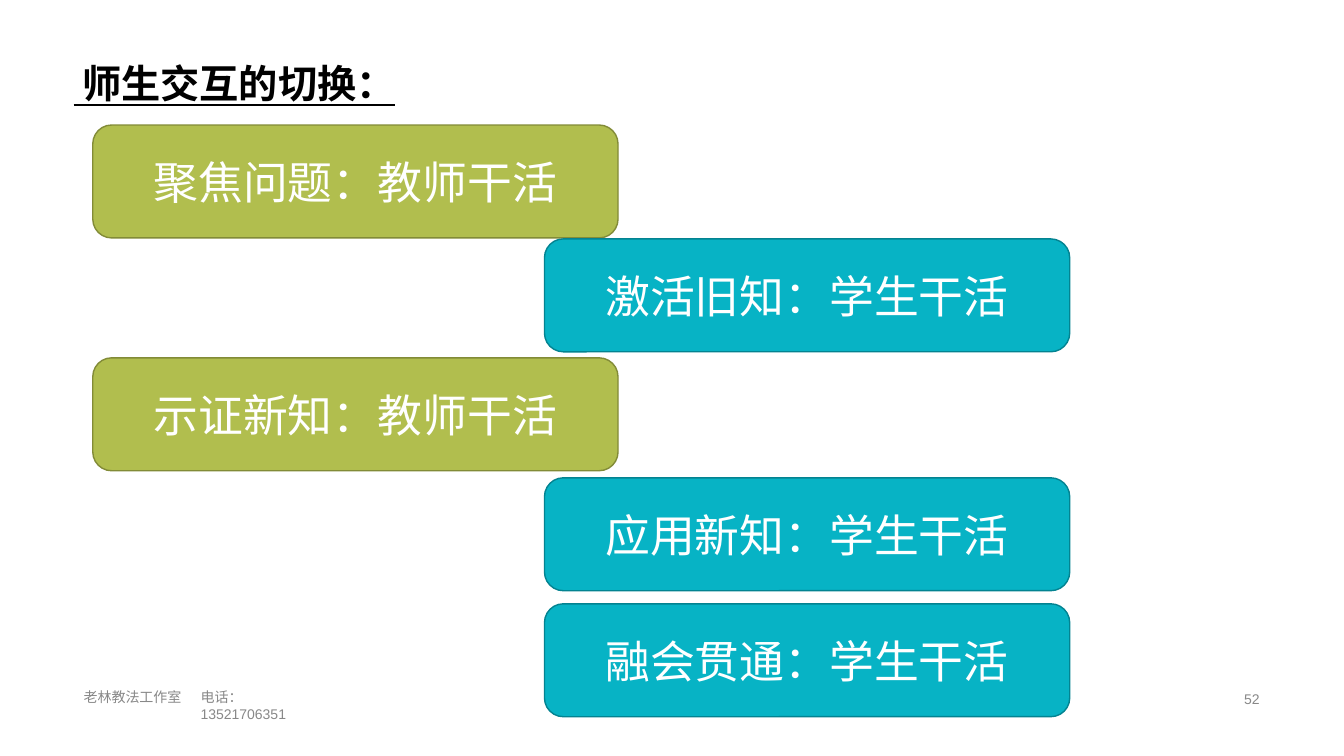
from lxml import etree
from pptx import Presentation
from pptx.dml.color import RGBColor
from pptx.enum.shapes import MSO_SHAPE
from pptx.enum.text import MSO_ANCHOR, PP_ALIGN
from pptx.oxml.ns import qn
from pptx.util import Inches, Pt

ROUNDED = MSO_SHAPE.ROUNDED_RECTANGLE
TOP, MIDDLE = MSO_ANCHOR.TOP, MSO_ANCHOR.MIDDLE
LEFT, CENTER = PP_ALIGN.LEFT, PP_ALIGN.CENTER

COLORS = {
    "black": "000000",
    "white": "FFFFFF",
    "grey": "888888",
    "teacher": "B1BE4E",
    "teacher_line": "828B37",
    "student": "07B3C5",
    "student_line": "038391",
}
CHINESE, LATIN, SERIF = "Noto Sans CJK SC", "Arial", "Times New Roman"


class SlideBuilder:
    """Holds the style and the slide being built."""

    def __init__(self, slide):
        self.slide = slide

    def color(self, name):
        return RGBColor.from_string(COLORS[name])

    def format_run(self, run, size, color, font=CHINESE):
        run.font.size = Pt(size)
        run.font.color.rgb = self.color(color)
        run.font.name = font
        east_asian = etree.SubElement(run.font._element, qn("a:ea"))
        east_asian.set("typeface", CHINESE)

    def set_frame(self, text_frame, anchor, align):
        text_frame.word_wrap = True
        text_frame.vertical_anchor = anchor
        text_frame.margin_left = text_frame.margin_right = 0
        text_frame.margin_top = text_frame.margin_bottom = 0
        text_frame.paragraphs[0].alignment = align

    def title(self, text, left, top, width, height):
        shape = self.slide.shapes.title
        shape.left, shape.top = Inches(left), Inches(top)
        shape.width, shape.height = Inches(width), Inches(height)
        self.set_frame(shape.text_frame, MIDDLE, LEFT)
        paragraph = shape.text_frame.paragraphs[0]
        # The underline starts one space before the words
        for part, font, bold in ((" ", SERIF, False), (text, CHINESE, True)):
            run = paragraph.add_run()
            run.text = part
            self.format_run(run, 28, "black", font)
            run.font.bold = bold
            run.font.underline = True

    def step(self, text, role, left, top, width=5.21, height=1.12):
        shape = self.slide.shapes.add_shape(
            ROUNDED, Inches(left), Inches(top), Inches(width), Inches(height))
        shape.shadow.inherit = False
        shape.fill.solid()
        shape.fill.fore_color.rgb = self.color(role)
        shape.line.color.rgb = self.color(role + "_line")
        shape.line.width = Pt(1)
        shape.text_frame.text = text
        self.set_frame(shape.text_frame, MIDDLE, CENTER)
        self.format_run(shape.text_frame.paragraphs[0].runs[0], 32, "white")

    def footer(self, parts, left, top, width, height):
        box = self.slide.shapes.add_textbox(
            Inches(left), Inches(top), Inches(width), Inches(height))
        self.set_frame(box.text_frame, TOP, LEFT)
        for text, font in parts:
            run = box.text_frame.paragraphs[0].add_run()
            run.text = text
            self.format_run(run, 10, "grey", font)


def main():
    presentation = Presentation()
    presentation.slide_width = Inches(13.33)
    presentation.slide_height = Inches(7.5)
    title_only = presentation.slide_layouts[5]
    builder = SlideBuilder(presentation.slides.add_slide(title_only))

    # Title
    builder.title("师生交互的切换：", 0.73, 0.58, 11.88, 0.49)

    # Steps: teacher on the left, students on the right
    columns = {"teacher": 0.92, "student": 5.4}
    steps = [
        ("聚焦问题：教师干活", "teacher", 1.24),
        ("激活旧知：学生干活", "student", 2.37),
        ("示证新知：教师干活", "teacher", 3.55),
        ("应用新知：学生干活", "student", 4.74),
        ("融会贯通：学生干活", "student", 5.99),
    ]
    for text, role, top in steps:
        builder.step(text, role, columns[role], top)

    # Footer and slide number
    builder.footer([("老林教法工作室", CHINESE)], 0.83, 6.83, 1.05, 0.21)
    builder.footer([("电话：", CHINESE), ("13521706351", LATIN)],
                   1.99, 6.83, 1.1, 0.4)
    builder.footer([("52", LATIN)], 12.34, 6.85, 0.21, 0.18)

    presentation.save("out.pptx")


if __name__ == "__main__":
    main()
